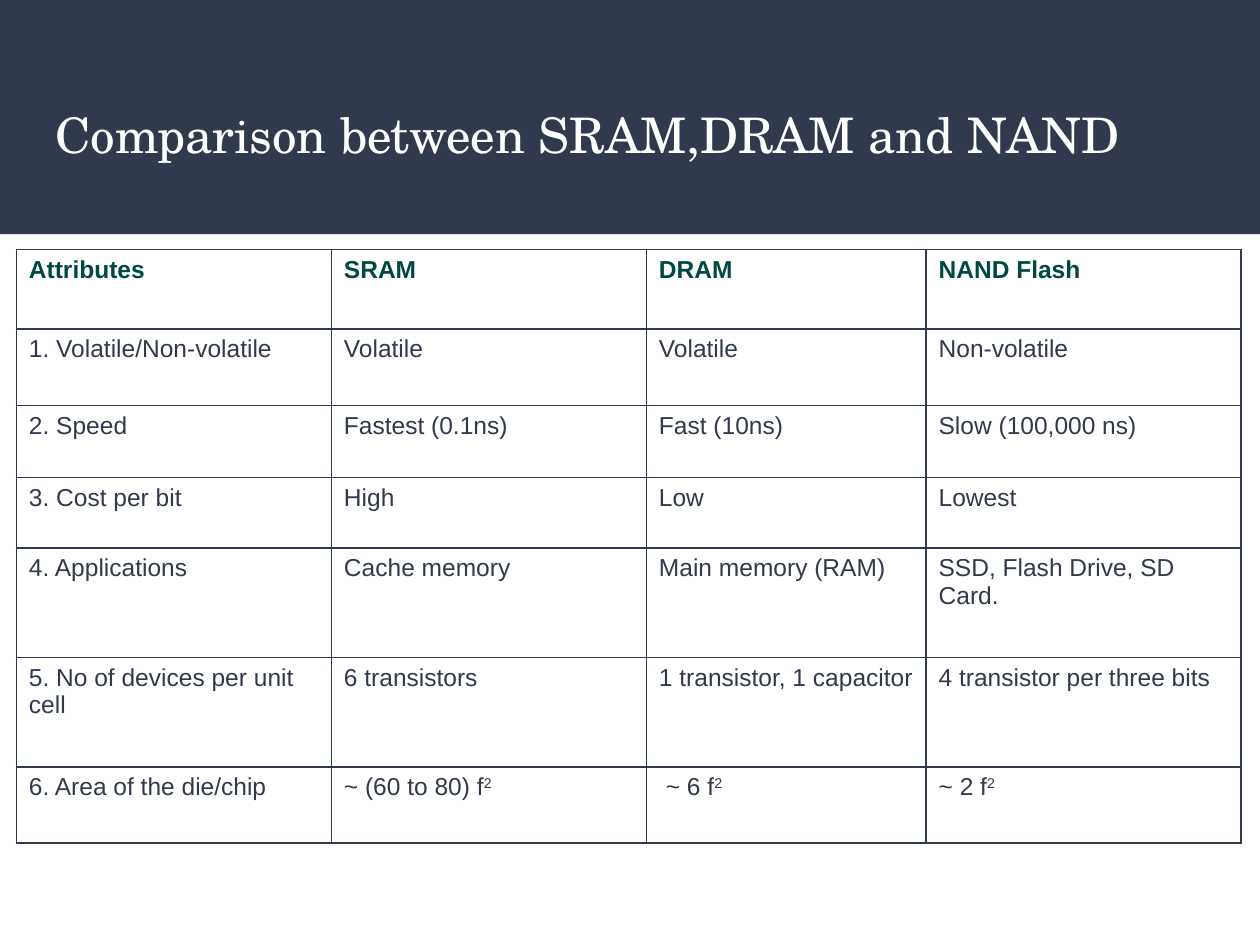
from dataclasses import dataclass

from lxml.etree import SubElement
from pptx import Presentation
from pptx.dml.color import RGBColor as Rgb
from pptx.enum.shapes import MSO_SHAPE as Shape
from pptx.enum.text import MSO_ANCHOR as Anchor
from pptx.oxml.ns import qn
from pptx.util import Inches, Pt


@dataclass(frozen=True)
class Theme:
    navy: str = "31394D"
    green: str = "004942"
    white: str = "FFFFFF"
    title_font: str = "TeX Gyre Schola"
    body_font: str = "Arial"
    title_size: int = 28
    body_size: int = 14
    border: int = 1


COLUMNS, ROWS = 100, 75  # slide grid
ATTRIBUTES = [
    ["Attributes", "SRAM", "DRAM", "NAND Flash"],
    ["1. Volatile/Non-volatile", "Volatile", "Volatile", "Non-volatile"],
    ["2. Speed", "Fastest (0.1ns)", "Fast (10ns)", "Slow (100,000 ns)"],
    ["3. Cost per bit", "High", "Low", "Lowest"],
    ["4. Applications", "Cache memory", "Main memory (RAM)", "SSD, Flash Drive, SD Card."],
    ["5. No of devices per unit cell", "6 transistors", "1 transistor, 1 capacitor",
     "4 transistor per three bits"],
    ["6. Area of the die/chip", "~ (60 to 80) f^2", " ~ 6 f^2", "~ 2 f^2"],
]
COLUMN_SPANS = [25, 25, 22.2, 25]
ROW_SPANS = [6.3, 6.1, 5.7, 5.6, 8.7, 8.7, 6]


class SlideBuilder:
    def __init__(self, deck, theme):
        self.theme = theme
        self.slide = deck.slides.add_slide(deck.slide_layouts[6])
        self.column = deck.slide_width / COLUMNS
        self.row = deck.slide_height / ROWS

    def place(self, left, top, width, height):
        return (round(left * self.column), round(top * self.row),
                round(width * self.column), round(height * self.row))

    def add_text(self, paragraph, text, color, **formats):
        """Add text runs; whatever follows a caret is superscript."""
        for index, part in enumerate(text.split("^")):
            run = paragraph.add_run()
            run.text = part
            for name, value in formats.items():
                setattr(run.font, name, value)
            run.font.color.rgb = Rgb.from_string(color)
            if index:
                run.font._element.set("baseline", "30000")

    def band(self, *area):
        band = self.slide.shapes.add_shape(Shape.RECTANGLE, *self.place(*area))
        band.shadow.inherit = False
        band.fill.solid()
        band.fill.fore_color.rgb = Rgb.from_string(self.theme.navy)
        band.line.fill.background()

    def title(self, text, *area):
        frame = self.slide.shapes.add_textbox(*self.place(*area)).text_frame
        inset = Inches(0.1)
        layout = dict(word_wrap=True, vertical_anchor=Anchor.TOP, margin_left=inset,
                      margin_top=inset, margin_right=inset, margin_bottom=inset)
        for name, value in layout.items():
            setattr(frame, name, value)
        self.add_text(frame.paragraphs[0], text, self.theme.white,
                      name=self.theme.title_font, size=Pt(self.theme.title_size))

    def outline(self, cell):
        properties = cell._tc.get_or_add_tcPr()
        for index, side in enumerate(("lnL", "lnR", "lnT", "lnB")):
            edge = properties.makeelement(qn(f"a:{side}"), {"w": str(Pt(self.theme.border))})
            fill = SubElement(edge, qn("a:solidFill"))
            SubElement(fill, qn("a:srgbClr"), val=self.theme.navy)
            properties.insert(index, edge)

    def table(self, content, column_spans, row_spans, left, top):
        area = self.place(left, top, sum(column_spans), sum(row_spans))
        table = self.slide.shapes.add_table(len(row_spans), len(column_spans), *area).table
        table.horz_banding = False
        for column, span in zip(table.columns, column_spans):
            column.width = round(span * self.column)
        for row, span in zip(table.rows, row_spans):
            row.height = round(span * self.row)
        for r, line in enumerate(content):
            heading = r == 0
            for c, text in enumerate(line):
                cell = table.cell(r, c)
                cell.margin_left = cell.margin_right = Inches(0.1)
                cell.fill.solid()
                cell.fill.fore_color.rgb = Rgb.from_string(self.theme.white)
                self.outline(cell)
                self.add_text(cell.text_frame.paragraphs[0], text,
                              self.theme.green if heading else self.theme.navy,
                              name=self.theme.body_font, size=Pt(self.theme.body_size),
                              bold=heading)


def main():
    deck = Presentation()
    deck.slide_width, deck.slide_height = Inches(10), Inches(7.5)
    builder = SlideBuilder(deck, Theme())

    # Heading
    builder.band(0, 0, COLUMNS, 18.6)
    builder.title("Comparison between SRAM,DRAM and NAND", 3.4, 7.3, 93.2, 9.1)

    # Memory comparison
    builder.table(ATTRIBUTES, COLUMN_SPANS, ROW_SPANS, 1.3, 19.8)

    deck.save("out.pptx")


if __name__ == "__main__":
    main()
